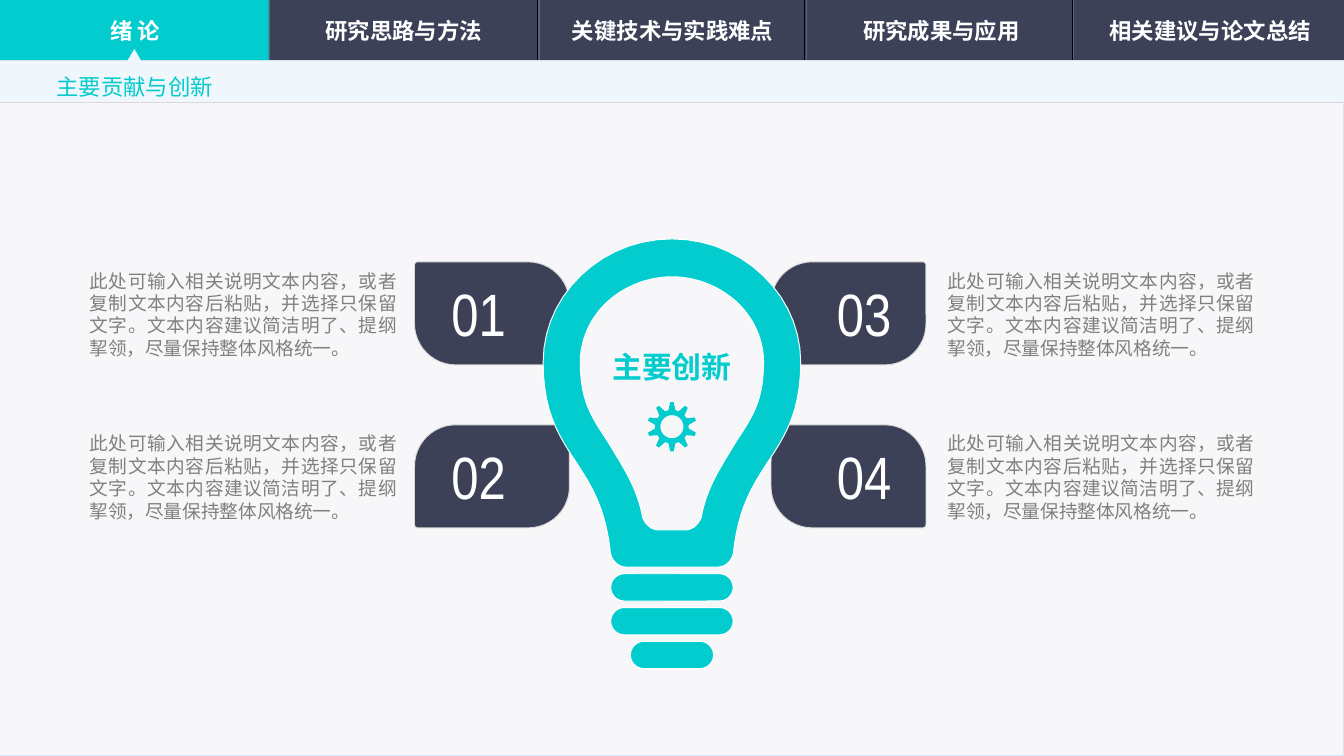
from dataclasses import dataclass
from math import cos, radians, sin

from lxml.etree import SubElement
from pptx import Presentation
from pptx.dml.color import RGBColor
from pptx.enum.shapes import MSO_CONNECTOR, MSO_SHAPE
from pptx.enum.text import MSO_ANCHOR, MSO_AUTO_SIZE, PP_ALIGN
from pptx.oxml.ns import qn
from pptx.util import Pt

CYAN, NAVY, WHITE, GREY, PALE = "03CCCE", "3C4157", "FFFFFF", "808080", "D9D9D9"
SANS = "Noto Sans CJK SC"
TABS = ["绪 论", "研究思路与方法", "关键技术与实践难点", "研究成果与应用", "相关建议与论文总结"]
EDGES = [143.4, 288, 431.2, 574.4]
NOTE = ("此处可输入相关说明文本内容，或者复制文本内容后粘贴，并选择只保留文字。"
        "文本内容建议简洁明了、提纲挈领，尽量保持整体风格统一。")
MID = 360
SHELL = [(0, 128),
         (38.2, 128), (69, 158.4), (69, 193.9),
         (69, 229.7), (54, 240.5), (43, 261.4),
         (36, 274.3), (33.8, 288), (33, 295.9),
         (32.4, 300.2), (28.8, 303.8), (24.5, 303.8)]
HOLLOW = [(0, 148.3),
          (13, 148.3), (25.6, 153.4), (34.9, 162),
          (44, 170.6), (49.1, 182.2), (49.1, 194),
          (49.1, 214.6), (43.2, 223.2), (34.6, 236.2),
          (31.6, 241.2), (28.4, 246.2), (25.2, 252),
          (20.2, 260.6), (17.1, 269.3), (15.7, 277.2),
          (14.4, 280.8), (11.1, 283.9), (7.2, 283.9)]


@dataclass
class Box:
    """A place in points."""
    x: float
    y: float
    w: float
    h: float

    def spots(self) -> list:
        """Give the four lengths."""
        return [Pt(v) for v in (self.x, self.y, self.w, self.h)]


@dataclass
class Label:
    """Words with their look."""
    text: str
    size: float
    hue: str
    face: str = "Arial Narrow"
    bold: bool = False
    align: PP_ALIGN = PP_ALIGN.LEFT
    anchor: MSO_ANCHOR = MSO_ANCHOR.TOP
    space: float = 1.0
    pad: tuple = (7.2, 3.6)


@dataclass
class Petal:
    """A numbered card with its note."""
    mark: str
    box: Box
    bends: tuple
    mark_x: float
    note_x: float


PETALS = [
    Petal("01", Box(222.1, 140.3, 83, 55.2), (0.03, 0.4), 234.7, 48),
    Petal("03", Box(413.1, 140.3, 83, 55.2), (0.4, 0.03), 441.2, 507.6),
    Petal("02", Box(222.1, 227.6, 83, 55.2), (0.4, 0.03), 234.7, 48),
    Petal("04", Box(413.1, 227.6, 83, 55.2), (0.03, 0.4), 441.2, 507.6),
]
PILLS = [Box(327.2, 307.4, 65.6, 14.6), Box(327.2, 325.5, 65.6, 14.6),
         Box(337.7, 343.6, 44.6, 14.6)]


def rgb(code: str) -> RGBColor:
    """Turn a hex string into a colour."""
    return RGBColor.from_string(code)


def paint(shape, fill: str, edge: str = "") -> None:
    """Fill and outline a shape."""
    shape.shadow.inherit = False
    shape.fill.solid()
    shape.fill.fore_color.rgb = rgb(fill)
    if edge:
        shape.line.color.rgb = rgb(edge)
        shape.line.width = Pt(0.5)
    else:
        shape.line.fill.background()


def block(shapes, box: Box, fill: str, edge: str = "",
          kind: MSO_SHAPE = MSO_SHAPE.RECTANGLE, bends: tuple = ()) -> None:
    """Draw a preset shape."""
    shape = shapes.add_shape(kind, *box.spots())
    for i, bend in enumerate(bends):
        shape.adjustments[i] = bend
    paint(shape, fill, edge)


def rule(shapes, start: tuple, end: tuple, hue: str, width: float) -> None:
    """Draw a straight line."""
    line = shapes.add_connector(MSO_CONNECTOR.STRAIGHT, *(Pt(v) for v in start + end))
    line.line.color.rgb = rgb(hue)
    line.line.width = Pt(width)
    SubElement(line.element.spPr, qn("a:effectLst"))


def trace(shapes, loops: list, fill: str, edge: str = "") -> None:
    """Draw one outline from closed loops."""
    loops = [[(Pt(x), Pt(y)) for x, y in loop] for loop in loops]
    pen = shapes.build_freeform(*loops[0][0], scale=1.0)
    for i, loop in enumerate(loops):
        if i:
            pen.move_to(*loop[0])
        pen.add_line_segments(loop[1:], close=True)
    paint(pen.convert_to_shape(), fill, edge)


def mirror(knots: list, steps: int = 14) -> list:
    """Flatten a half curve and reflect it about the middle."""
    half = [knots[0]]
    for i in range(0, len(knots) - 1, 3):
        for n in range(1, steps + 1):
            t = n / steps
            parts = ((1 - t) ** 3, 3 * t * (1 - t) ** 2, 3 * t * t * (1 - t), t ** 3)
            half.append(tuple(sum(p * k[axis] for p, k in zip(parts, knots[i:i + 4]))
                              for axis in (0, 1)))
    return [(MID + x, y) for x, y in half] + [(MID - x, y) for x, y in half[:0:-1]]


def polar(y: float, size: float, angle: float) -> tuple:
    """Find a point around the middle line."""
    return MID + size * sin(radians(angle)), y - size * cos(radians(angle))


def gear(shapes, y: float) -> None:
    """Draw a gear of ten teeth."""
    tooth = [(9, -12), (13.2, -4), (13.2, 4), (9, 12)]
    rim = [polar(y, size, 36 * i + turn) for i in range(10) for size, turn in tooth]
    hole = [polar(y, 6.2, 10 * i) for i in range(36)]
    trace(shapes, [rim, hole], CYAN)


def write(shape, label: Label) -> None:
    """Set the words of a shape."""
    frame = shape.text_frame
    side, top = (Pt(v) for v in label.pad)
    look = {"word_wrap": True, "auto_size": MSO_AUTO_SIZE.NONE,
            "vertical_anchor": label.anchor, "margin_left": side,
            "margin_right": side, "margin_top": top, "margin_bottom": top}
    for name, value in look.items():
        setattr(frame, name, value)
    para = frame.paragraphs[0]
    para.alignment, para.line_spacing = label.align, label.space
    run = para.add_run()
    run.text = label.text
    style = {"size": Pt(label.size), "bold": label.bold, "name": label.face}
    for name, value in style.items():
        setattr(run.font, name, value)
    run.font.color.rgb = rgb(label.hue)
    SubElement(run.font._element, qn("a:ea")).set("typeface", SANS)


def place(shapes, box: Box, label: Label) -> None:
    """Add a text box."""
    write(shapes.add_textbox(*box.spots()), label)


def header(shapes) -> None:
    """Draw the tabs, the ribbon and the title."""
    block(shapes, Box(0, 0, 720, 32.4), NAVY)
    for x in EDGES:
        rule(shapes, (x, 0), (x, 32.4), "000000", 0.5)
        rule(shapes, (x + 0.75, 0), (x + 0.75, 32.4), "596181", 0.75)
    block(shapes, Box(0, 54.7, 720, 350.3), "F7F7F9", "D4E7F9")
    block(shapes, Box(0, 0, 144, 32.4), CYAN)
    trace(shapes, [[(72, 26.2), (75.6, 32.4), (720, 32.4), (720, 54.7),
                    (0, 54.7), (0, 32.4), (68.4, 32.4)]], "EFF6FC")
    rule(shapes, (0, 54.7), (720, 54.7), PALE, 0.5)
    for i, text in enumerate(TABS):
        place(shapes, Box(0.7 + 144 * i, 5.2, 143.3, 22.3),
              Label(text, 12, WHITE, SANS, True, PP_ALIGN.CENTER, MSO_ANCHOR.MIDDLE))
    title = shapes.title
    title.left, title.top, title.width, title.height = Box(23, 29.5, 120, 26.6).spots()
    write(title, Label("主要贡献与创新", 12, CYAN, SANS,
                       anchor=MSO_ANCHOR.MIDDLE, space=1.5))
    shapes.element.append(title.element)


def main() -> None:
    """Build the slide and save it."""
    deck = Presentation()
    deck.slide_width, deck.slide_height = Pt(720), Pt(405)
    shapes = deck.slides.add_slide(deck.slide_layouts[5]).shapes
    header(shapes)
    for petal in PETALS:
        block(shapes, petal.box, NAVY, PALE, MSO_SHAPE.ROUND_2_DIAG_RECTANGLE, petal.bends)
    trace(shapes, [mirror(SHELL), mirror(HOLLOW)], CYAN, WHITE)
    for pill in PILLS:
        block(shapes, pill, CYAN, WHITE, MSO_SHAPE.ROUNDED_RECTANGLE, (0.5,))
    gear(shapes, 228.6)
    for petal in PETALS:
        y = petal.box.y
        place(shapes, Box(petal.mark_x, y + 4.6, 49, 46), Label(petal.mark, 32, WHITE))
        place(shapes, Box(petal.note_x, y + 4, 164.5, 48),
              Label(NOTE, 10, GREY, "Arial", align=PP_ALIGN.JUSTIFY, pad=(0, 0)))
    place(shapes, Box(310, 173.5, 100, 33),
          Label("主要创新", 16, CYAN, bold=True, align=PP_ALIGN.CENTER, space=1.5))
    deck.save("out.pptx")


if __name__ == "__main__":
    main()
